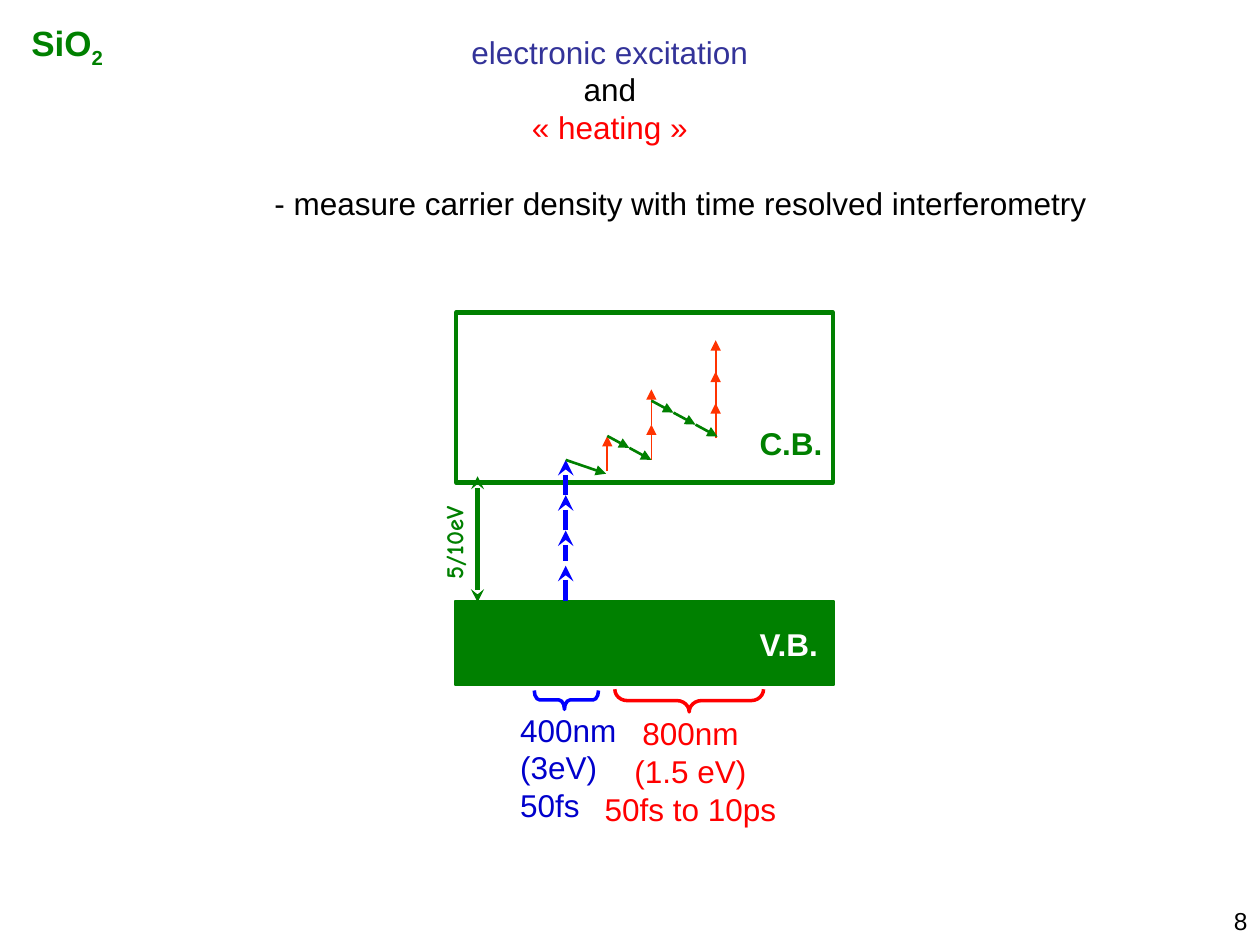
from pptx import Presentation
from pptx.dml.color import RGBColor
from pptx.enum.shapes import MSO_CONNECTOR, MSO_SHAPE
from pptx.enum.text import PP_ALIGN
from pptx.util import Inches, Pt
from lxml.etree import SubElement
from pptx.oxml.ns import qn

deck = Presentation()
deck.slide_width, deck.slide_height = Inches(10), Inches(7.5)
col, row = deck.slide_width / 100, deck.slide_height / 75
slide = deck.slides.add_slide(deck.slide_layouts[6])
shapes = slide.shapes

hues = {"green": "008000", "blue": "0000FF", "navy": "0000CC", "violet": "333399",
        "red": "FF0000", "orange": "FF3300", "white": "FFFFFF", "black": "000000"}
tint = {name: RGBColor.from_string(code) for name, code in hues.items()}


def arrow(start, end, hue, width, ends):
    line = shapes.add_connector(MSO_CONNECTOR.STRAIGHT, int(start[0] * col), int(start[1] * row),
                                int(end[0] * col), int(end[1] * row))
    line.line.color.rgb, line.line.width = tint[hue], Pt(width)
    for tag, kind in ends.items():
        SubElement(line.line._get_or_add_ln(), qn("a:" + tag), type=kind)
    SubElement(line._element.spPr, qn("a:effectLst"))


def label(place, lines, look, align=PP_ALIGN.LEFT, wrap=False):
    x, y, w, h = place
    box = shapes.add_textbox(int(x * col), int(y * row), int(w * col), int(h * row))
    frame = box.text_frame
    frame.word_wrap = wrap
    for i, (text, hue) in enumerate(lines):
        para = frame.paragraphs[0] if i == 0 else frame.add_paragraph()
        para.alignment = align
        run = para.add_run()
        run.text = text
        run.font.color.rgb = tint[hue]
        for key, value in look.items():
            setattr(run.font, key, value)
    return box


plain = {"name": "Arial", "size": Pt(18), "bold": False}
bold = {**plain, "bold": True}
tip = {"tailEnd": "triangle"}
barb = {"tailEnd": "stealth"}

bands = [
    (MSO_SHAPE.RECTANGLE, (36.1, 47.7, 30.1, 6.7), "green", 1, "green", 0, []),
    (MSO_SHAPE.RECTANGLE, (36.2, 24.8, 29.9, 13.5), "green", 2.5, None, 0, []),
    (MSO_SHAPE.LEFT_BRACE, (44.2, 53, 1.5, 5.1), "blue", 2, None, 270, [0.29, 0.47]),
    (MSO_SHAPE.LEFT_BRACE, (53.8, 49.7, 1.8, 11.8), "red", 2, None, 270, [0.54, 0.5]),
]
for kind, (x, y, w, h), hue, width, fill, turn, bends in bands:
    band = shapes.add_shape(kind, int(x * col), int(y * row), int(w * col), int(h * row))
    band.shadow.inherit = False
    band.rotation = turn
    band.line.color.rgb, band.line.width = tint[hue], Pt(width)
    for i, bend in enumerate(bends):
        band.adjustments[i] = bend
    if fill:
        band.fill.solid()
        band.fill.fore_color.rgb = tint[fill]
    else:
        band.fill.background()

step = 2.8
for i in range(4):
    foot = 47.7 - i * step - (0.4 if i == 1 else 0)
    arrow((44.9, foot), (44.9, 47.7 - (i + 1) * step), "blue", 3, barb)
arrow((37.9, 37.8), (37.9, 47.8), "green", 2.5, {"headEnd": "stealth", **barb})

for x, feet in [(48.2, [37.4]), (51.7, [33.7, 36.5]), (56.8, [29.8, 32.3, 34.8])]:
    for foot in feet:
        arrow((x, foot), (x, foot - step), "orange", 1, tip)

arrow((44.9, 36.5), (48.1, 37.6), "green", 1.5, tip)
for x, y, count in [(48.2, 34.6, 2), (51.7, 31.8, 3)]:
    for i in range(count):
        arrow((x + 1.75 * i, y + 0.95 * i), (x + 1.75 * (i + 1), y + 0.95 * (i + 1)),
              "green", 1.5, tip)

gap = label((31.5, 40.8, 9, 3.3), [("5/10eV", "green")],
            {"name": "Comic Neue", "size": Pt(14), "bold": True})
gap.rotation = 270
title = label((36.3, 2.1, 25.6, 10.1),
              [("electronic excitation", "violet"), ("and", "black"), ("« heating »", "red")],
              plain, PP_ALIGN.CENTER)
title.text_frame.paragraphs[0]._p.get_or_add_pPr().set("marR", str(int(1.4 * col)))
label((59.3, 49.1, 6.9, 4), [("V.B.", "white")], bold)
label((59.3, 33.2, 7, 4), [("C.B.", "green")], bold)
label((40.3, 55.9, 9.7, 10.1), [(text, "navy") for text in ("400nm", "(3eV)", "50fs")], plain)
label((46.9, 56.2, 15.8, 10.1),
      [(text, "red") for text in ("800nm", "(1.5 eV)", "50fs to 10ps")], plain, PP_ALIGN.CENTER)
label((20.8, 14.1, 68.6, 7.1),
      [("- measure carrier density with time resolved interferometry", "black")], plain)
label((76.7, 71.4, 23.3, 3.6), [("8", "black")], {**plain, "size": Pt(14)}, PP_ALIGN.RIGHT, True)

glass = label((1.5, 1.2, 21.3, 4.4), [("SiO", "green")], {**bold, "size": Pt(20)}, wrap=True)
sub = glass.text_frame.paragraphs[0].add_run()
sub.text = "2"
sub.font.color.rgb = tint["green"]
for key, value in {**bold, "size": Pt(20)}.items():
    setattr(sub.font, key, value)
sub._r.get_or_add_rPr().set("baseline", "-25000")

deck.save("out.pptx")
